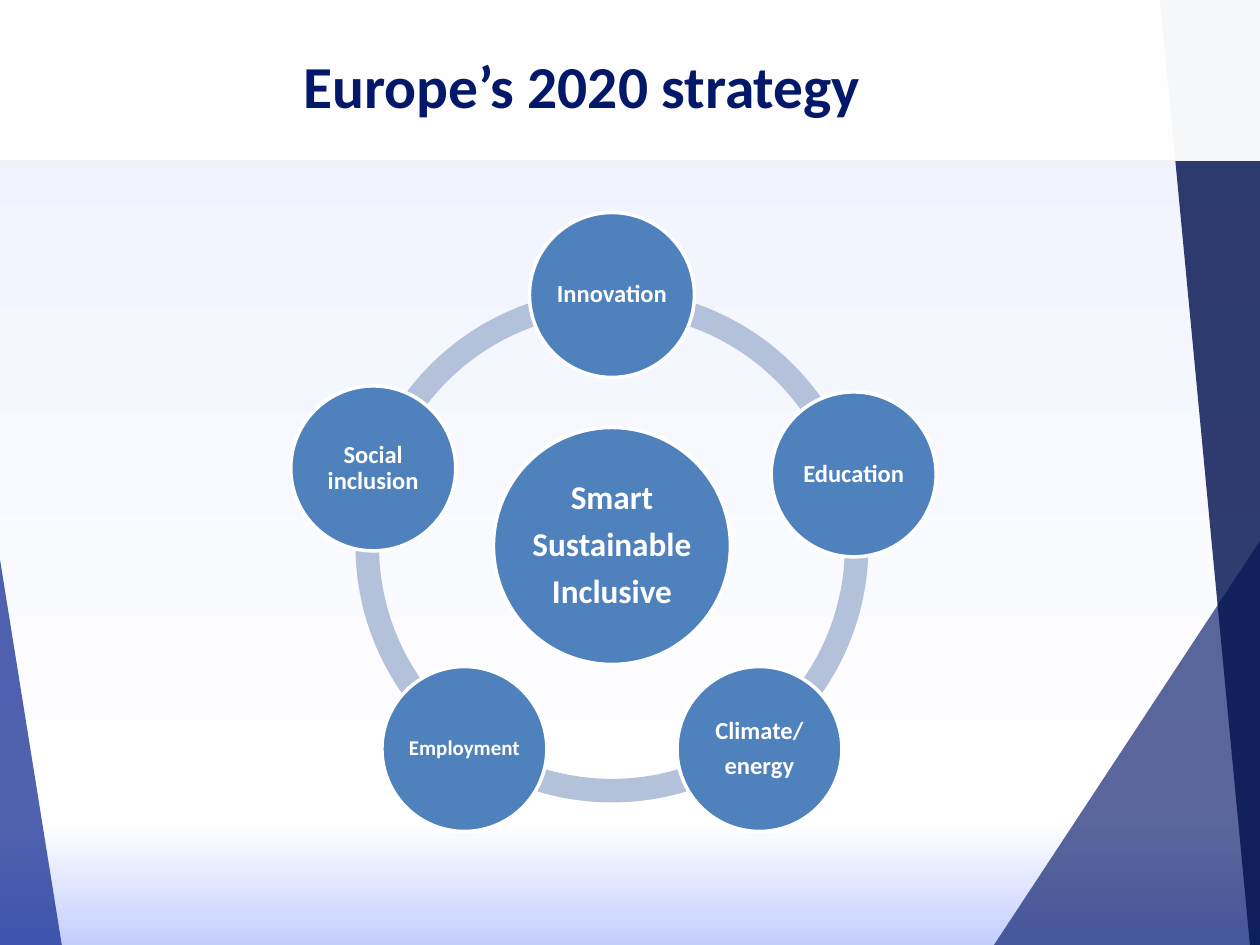
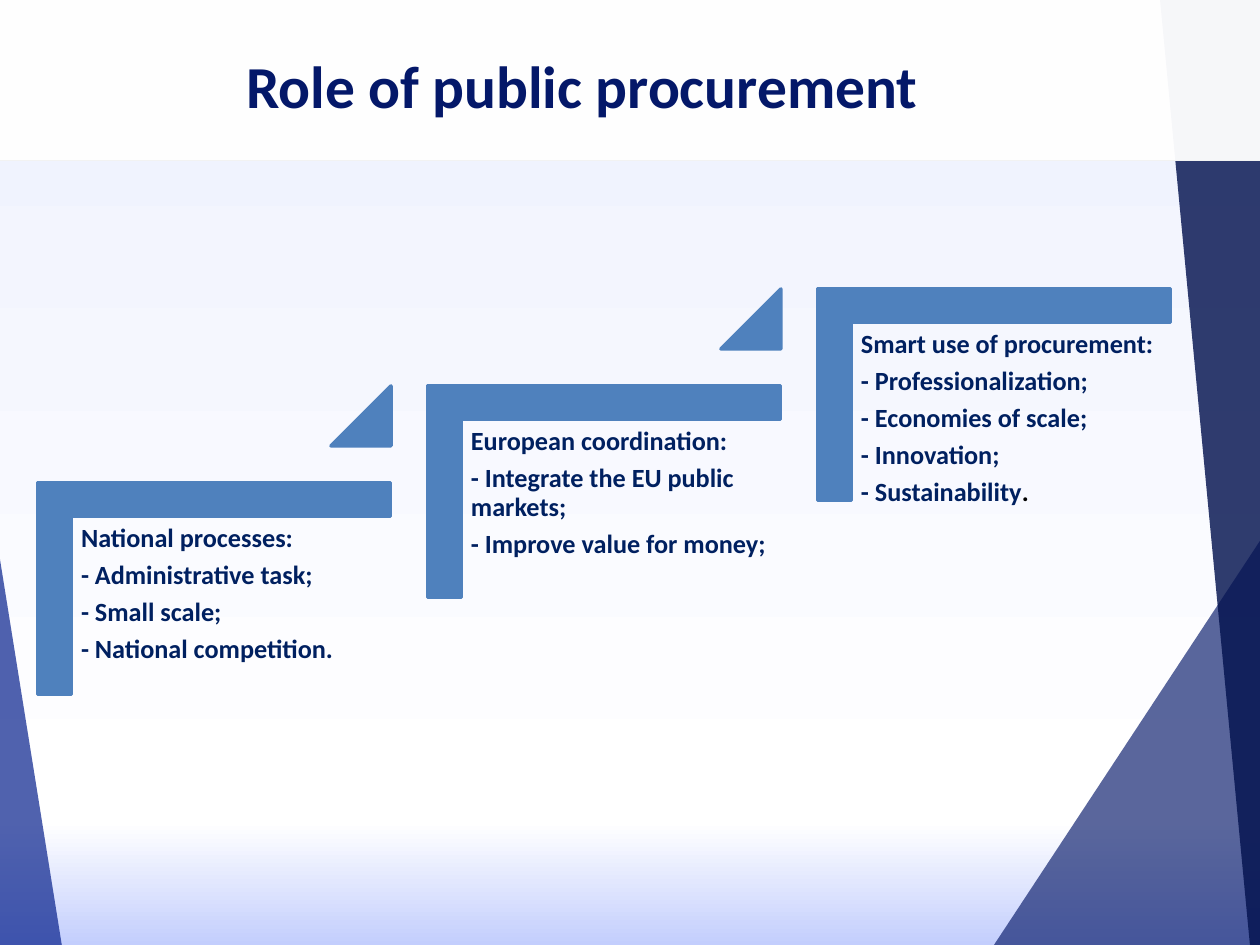
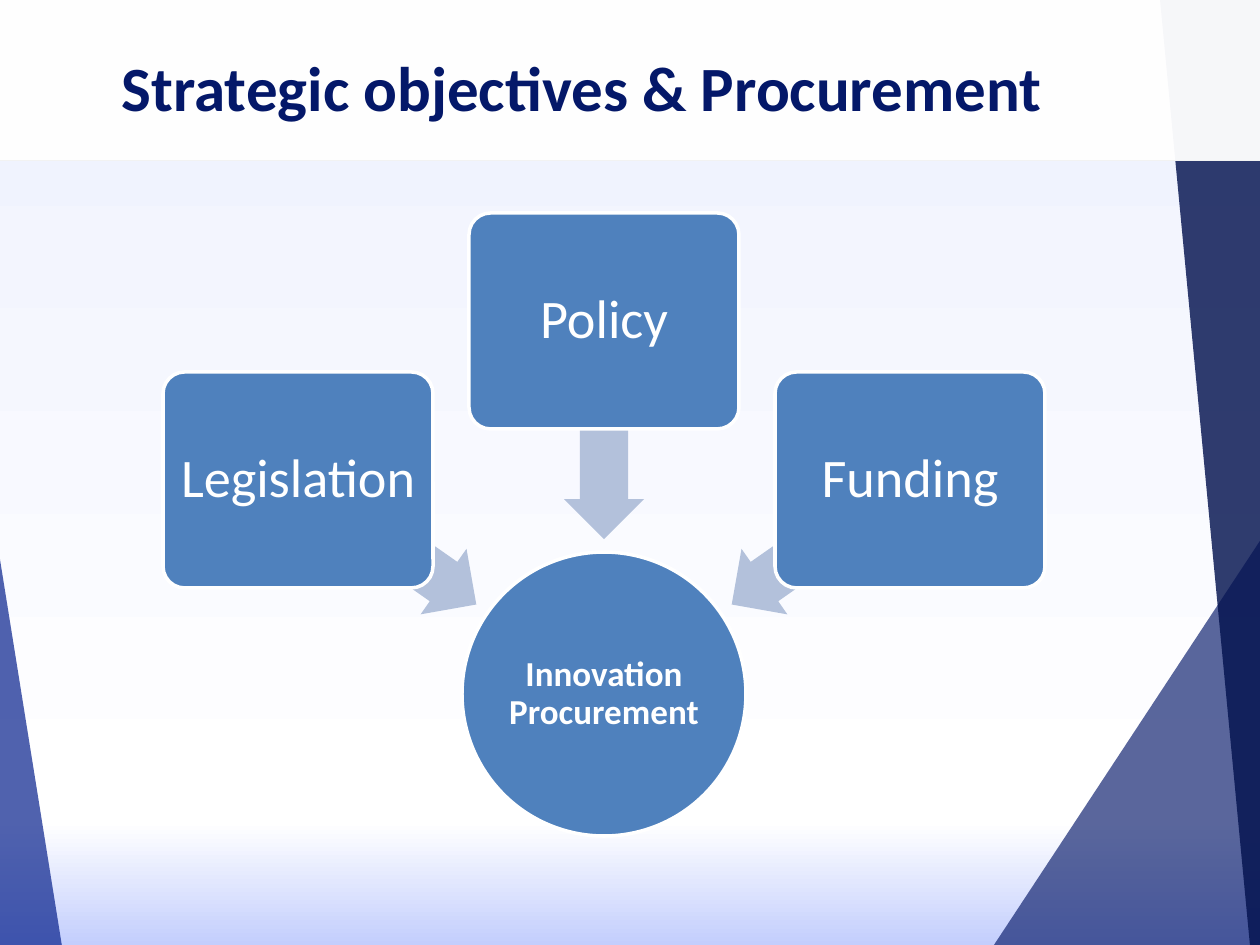
"""Build three slides on the Europe 2020 strategy and public procurement."""
from copy import deepcopy
from dataclasses import dataclass, replace
from math import cos, radians, sin

from lxml import etree
from pptx import Presentation
from pptx.dml.color import RGBColor
from pptx.enum.shapes import MSO_SHAPE
from pptx.enum.text import MSO_ANCHOR, MSO_AUTO_SIZE, PP_ALIGN
from pptx.oxml.ns import qn
from pptx.util import Pt

SCALE = 914400 / 126
WIDTH, HEIGHT = 1260, 945
TITLE_ONLY = 5
FONT = "Calibri"

NAVY, INK, BLACK, WHITE = "041869", "002060", "000000", "FFFFFF"
BLUE, PALE, BAND_EDGE = "4F81BD", "B3C1DB", "F2F2F2"
BACKDROP = [("EEF1FE", 0), ("FFFFFF", 0.87), ("C3CEFD", 1)]

RECT, OVAL, ROUNDED = MSO_SHAPE.RECTANGLE, MSO_SHAPE.OVAL, MSO_SHAPE.ROUNDED_RECTANGLE
ARC, CORNER = MSO_SHAPE.BLOCK_ARC, MSO_SHAPE.CORNER
TRIANGLE, ARROW = MSO_SHAPE.ISOSCELES_TRIANGLE, MSO_SHAPE.LEFT_ARROW
LEFT, CENTER = PP_ALIGN.LEFT, PP_ALIGN.CENTER
TOP, MIDDLE = MSO_ANCHOR.TOP, MSO_ANCHOR.MIDDLE
FIXED = MSO_AUTO_SIZE.NONE


@dataclass(frozen=True)
class TextStyle:
    """Look of a block of text."""
    size: int
    color: str = WHITE
    bold: bool = True
    align: int = CENTER
    anchor: int = MIDDLE
    inset: int = 2


@dataclass(frozen=True)
class Wedge:
    """Translucent polygon at the edge of every slide."""
    points: list[tuple[int, int]]
    color: str
    alpha: int


@dataclass(frozen=True)
class Node:
    """Circle on the strategy ring."""
    lines: list[str]
    size: int = 14
    dx: int = 0
    dy: int = 0


@dataclass(frozen=True)
class Step:
    """One stair of the procurement staircase."""
    lines: list[str]
    ending: str = ""


@dataclass(frozen=True)
class Driver:
    """Box whose arrow points at the goal circle."""
    label: str
    side: int
    top: int
    arrow_y: int
    rotation: int


STEP_STYLE = TextStyle(15, INK, align=LEFT, anchor=TOP, inset=8)
DRIVER_STYLE = TextStyle(31, bold=False, inset=8)

WEDGES = [
    Wedge([(-1, 553), (62, 946), (-1, 945)], "06208C", 70),
    Wedge([(994, 945), (1260, 541), (1261, 945)], "051869", 66),
    Wedge([(1160, -1), (1250, 945), (1262, 945), (1261, -1)], "03124F", 82),
]
NODES = [
    Node(["Innovation"]),
    Node(["Education"], dx=3, dy=6),
    Node(["Climate/", "energy"]),
    Node(["Employment"], size=12),
    Node(["Social inclusion"]),
]
STEPS = [
    Step(["National processes:", "- Administrative task;", "- Small scale;",
          "- National competition."]),
    Step(["European coordination:", "- Integrate the EU public markets;",
          "- Improve value for money;"]),
    Step(["Smart use of procurement:", "- Professionalization;", "- Economies of scale;",
          "- Innovation;", "- Sustainability"], "."),
]
DRIVERS = [
    Driver("Legislation", -1, 372, 542, 215),
    Driver("Policy", 0, 213, 430, 270),
    Driver("Funding", 1, 372, 542, 325),
]


def px(n: float) -> int:
    """Turn px into EMU."""
    return round(n * SCALE)


def rgb(color: str) -> RGBColor:
    """Turn a hex string into a colour."""
    return RGBColor.from_string(color)


def paint(sp, fill: str, line: str | None = None, weight: float = 2, alpha: int = 100) -> None:
    """Set fill, outline and opacity, and drop the shadow."""
    sp.shadow.inherit = False
    sp.fill.solid()
    sp.fill.fore_color.rgb = rgb(fill)
    if alpha < 100:
        clr = sp.element.spPr.xpath("./a:solidFill/a:srgbClr")[0]
        etree.SubElement(clr, qn("a:alpha"), val=str(alpha * 1000))
    if line:
        sp.line.color.rgb = rgb(line)
        sp.line.width = Pt(weight)
    else:
        sp.line.fill.background()


def add_shape(slide, kind, x: float, y: float, w: int, h: int, fill: str,
              line: str | None = None, adj: tuple = (), rotation: int = 0):
    """Add a painted preset shape."""
    sp = slide.shapes.add_shape(kind, px(x), px(y), px(w), px(h))
    for i, value in enumerate(adj):
        sp.adjustments[i] = value
    sp.rotation = rotation
    paint(sp, fill, line)
    return sp


def add_disc(slide, cx: float, cy: float, size: int):
    """Add a white-edged circle around a centre."""
    return add_shape(slide, OVAL, cx - size / 2, cy - size / 2, size, size, BLUE, WHITE)


def add_run(p, text: str, style: TextStyle) -> None:
    """Add one formatted run."""
    r = p.add_run()
    r.text = text
    r.font.name = FONT
    r.font.size = Pt(style.size)
    r.font.bold = style.bold
    r.font.color.rgb = rgb(style.color)


def write(tf, lines: list[str], style: TextStyle) -> None:
    """Fill a text frame with one paragraph a line."""
    tf.word_wrap = True
    tf.vertical_anchor = style.anchor
    tf.margin_left = tf.margin_right = tf.margin_top = tf.margin_bottom = px(style.inset)
    for i, line in enumerate(lines):
        p = tf.add_paragraph() if i else tf.paragraphs[0]
        p.alignment = style.align
        p.line_spacing = 0.9
        p.space_after = Pt(style.size * 0.33)
        add_run(p, line, style)


def set_backdrop(master) -> None:
    """Give the master its three-stop gradient."""
    fill = master.background.fill
    fill.gradient()
    fill.gradient_angle = 270
    stops = master.element.xpath(".//p:bg//a:gsLst")[0]
    stops.append(deepcopy(stops[-1]))
    for stop, (color, position) in zip(fill.gradient_stops, BACKDROP):
        stop.color.rgb = rgb(color)
        stop.position = position


def add_decor(master, slide) -> None:
    """Draw the wedges and title band and move them to the master."""
    decor = []
    for wedge in WEDGES:
        builder = slide.shapes.build_freeform(*wedge.points[0], scale=SCALE)
        builder.add_line_segments(wedge.points[1:], close=True)
        sp = builder.convert_to_shape()
        paint(sp, wedge.color, alpha=wedge.alpha)
        decor.append(sp)
    band = add_shape(slide, RECT, -1, -1, WIDTH + 2, 162, WHITE)
    paint(band, WHITE, BAND_EDGE, 0.5, 96)
    decor.append(band)
    for i, sp in enumerate(decor):
        sp.element.xpath(".//p:cNvPr")[0].set("id", str(100 + i))
        master.shapes.element.insert(2 + i, sp.element)


def add_slide(prs, title: str, size: int = 34):
    """Add a slide with its formatted title."""
    slide = prs.slides.add_slide(prs.slide_layouts[TITLE_ONLY])
    sp = slide.shapes.title
    sp.left, sp.top, sp.width, sp.height = px(0), px(43), px(1164), px(50 + size)
    tf = sp.text_frame
    tf.auto_size = FIXED
    tf.vertical_anchor = MIDDLE
    p = tf.paragraphs[0]
    p.alignment = CENTER
    add_run(p, title, TextStyle(size, NAVY))
    return slide


def draw_ring(slide) -> None:
    """Draw the strategy ring with its core and nodes."""
    cx, cy, radius, ring = 612, 546, 251, 513
    sweep = 360 // len(NODES)
    angles = [(270 + sweep * i) % 360 for i in range(len(NODES))]
    for angle in angles:
        adj = (angle * 0.6, (angle + sweep) % 360 * 0.6, 0.046)
        add_shape(slide, ARC, cx - ring / 2, cy - ring / 2, ring, ring, PALE, adj=adj)
    core = add_disc(slide, cx, cy, 237)
    write(core.text_frame, ["Smart", "Sustainable", "Inclusive"], TextStyle(19))
    for node, angle in zip(NODES, angles):
        x = cx + radius * cos(radians(angle)) + node.dx
        y = cy + radius * sin(radians(angle)) + node.dy
        write(add_disc(slide, x, y, 165).text_frame, node.lines, TextStyle(node.size))


def draw_stairs(slide) -> None:
    """Draw the rising steps with a triangle between neighbours."""
    for i, step in enumerate(STEPS):
        x, y = 390 * i, -97 * i
        add_shape(slide, CORNER, x + 108, y + 412, 212, 353, BLUE, BLUE, (0.161, 0.161), 90)
        box = slide.shapes.add_textbox(px(x + 73), px(y + 517), px(319), px(280))
        write(box.text_frame, step.lines, STEP_STYLE)
        if step.ending:
            add_run(box.text_frame.paragraphs[-1], step.ending,
                    replace(STEP_STYLE, color=BLACK))
        if i < len(STEPS) - 1:
            add_shape(slide, TRIANGLE, x + 331, y + 386, 60, 60, BLUE, BLUE, (1,))


def draw_drivers(slide) -> None:
    """Draw the goal circle and the three boxes pointing at it."""
    cx = 604
    goal = add_disc(slide, cx, 694, 284)
    write(goal.text_frame, ["Innovation Procurement"], TextStyle(20))
    for d in DRIVERS:
        add_shape(slide, ARROW, cx + 217 * d.side - 109, d.arrow_y - 40, 218, 80, PALE,
                  adj=(0.6, 0.5), rotation=d.rotation)
        box = add_shape(slide, ROUNDED, cx + 306 * d.side - 135, d.top, 270, 216, BLUE,
                        WHITE, (0.1,))
        write(box.text_frame, [d.label], DRIVER_STYLE)


def main() -> None:
    """Build and save the presentation."""
    prs = Presentation()
    prs.slide_width, prs.slide_height = px(WIDTH), px(HEIGHT)
    strategy = add_slide(prs, "Europe’s 2020 strategy")
    set_backdrop(prs.slide_master)
    add_decor(prs.slide_master, strategy)
    draw_ring(strategy)
    draw_stairs(add_slide(prs, "Role of public procurement"))
    draw_drivers(add_slide(prs, "Strategic objectives & Procurement", 36))
    prs.save("out.pptx")


if __name__ == "__main__":
    main()
